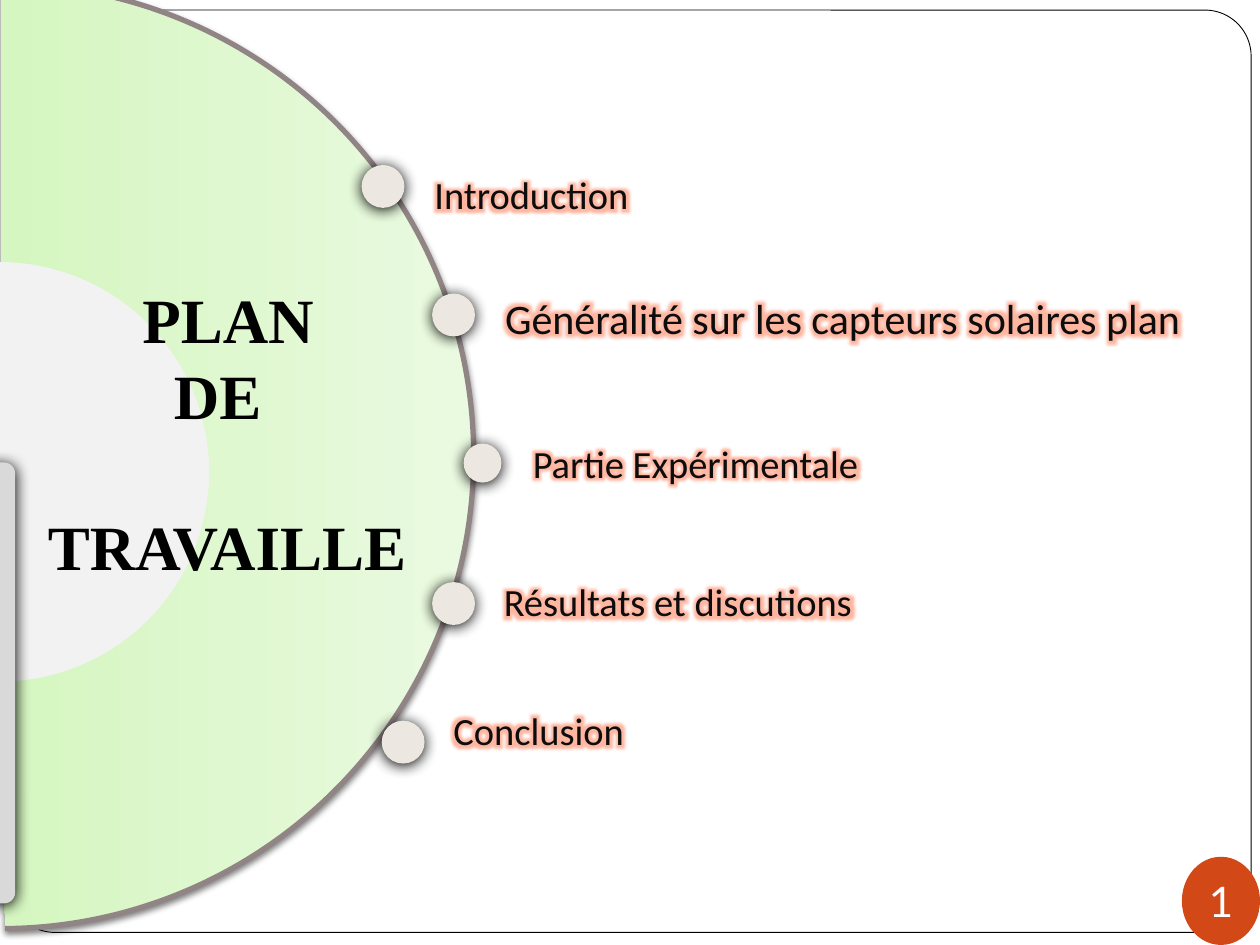
from dataclasses import dataclass

from lxml.etree import SubElement
from pptx import Presentation
from pptx.dml.color import RGBColor
from pptx.enum.shapes import MSO_SHAPE as Shape
from pptx.enum.text import MSO_ANCHOR as Anchor, MSO_AUTO_SIZE as Fit, PP_ALIGN as Align
from pptx.oxml import parse_xml
from pptx.oxml.ns import nsdecls, qn
from pptx.util import Inches, Pt


@dataclass(frozen=True)
class Theme:
    """Colours, fonts and type sizes of the slide."""
    paper: str = "FFFFFF"
    black: str = "000000"
    ink: str = "0D0D0D"
    outline: str = "69240C"
    glow: str = "FF4A14"
    badge: str = "D34817"
    rim: str = "918485"
    hub: str = "F2F2F2"
    bar: str = "D9D9D9"
    dot: str = "ECE8E1"
    dial: tuple = ((28, "92D050"), (50, "D5F6C0"), (100, "EAFAE0"))
    body_font: str = "Calibri"
    title_font: str = "Times New Roman"
    number_font: str = "Lato"
    title_size: int = 36
    number_size: int = 24
    item_size: int = 22
    item_large: int = 24


@dataclass(frozen=True)
class Box:
    """A region measured in cells of a 100 by 75 grid."""
    x: float
    y: float
    w: float
    h: float

    def sub(self, x, y, w, h):
        """Return a box placed relative to this one."""
        return Box(self.x + x, self.y + y, w, h)

    def emu(self):
        """Return left, top, width and height as lengths."""
        return [Inches(v / 10) for v in (self.x, self.y, self.w, self.h)]


T = Theme()
ITEMS = (
    ("Introduction", T.item_size, (0.7, 0.1, 3.4, 3.4), (5.5, 0.1, 42, 4.7)),
    ("Généralité sur les capteurs solaires plan", T.item_large,
     (6.3, 10.3, 3.4, 3.4), (11.1, 9.7, 57.8, 5)),
    ("Partie Expérimentale", T.item_size, (8.8, 22.2, 3, 3.1), (13.3, 21.4, 52.8, 4.7)),
    ("Résultats et discutions", T.item_size, (6.3, 33.2, 3.4, 3.4), (11, 32.4, 52.8, 4.7)),
    ("Conclusion", T.item_size, (2.3, 44.2, 3.4, 3.4), (7, 42.6, 52.8, 4.7)),
)


def rgb(value):
    """Turn a hex string into a colour."""
    return RGBColor.from_string(value)


def add_shape(s, kind, box, fill=None, line=None, width=1, adj=()):
    """Add a preset shape with a plain fill and line."""
    sp = s.shapes.add_shape(kind, *box.emu())
    sp.shadow.inherit = False
    for i, value in enumerate(adj):
        sp.adjustments[i] = value
    if fill:
        sp.fill.solid()
        sp.fill.fore_color.rgb = rgb(fill)
    if line:
        sp.line.color.rgb = rgb(line)
        sp.line.width = Pt(width)
    else:
        sp.line.fill.background()
    return sp


def add_shadow(sp, blur=8.5, dist=1, alpha=100):
    """Give a shape a shadow that falls downwards."""
    effects = sp._element.spPr.find(qn("a:effectLst"))
    shadow = SubElement(effects, qn("a:outerShdw"), blurRad=str(Pt(blur)),
                        dist=str(Pt(dist)), dir="5400000", algn="t", rotWithShape="0")
    color = SubElement(shadow, qn("a:srgbClr"), val=T.black)
    SubElement(color, qn("a:alpha"), val=str(alpha * 1000))


def add_gradient(sp, stops):
    """Fill a shape with a gradient running left to right."""
    marks = "".join(f'<a:gs pos="{pos * 1000}"><a:srgbClr val="{color}"/></a:gs>'
                    for pos, color in stops)
    fill = parse_xml(f'<a:gradFill {nsdecls("a")} rotWithShape="1"><a:gsLst>{marks}</a:gsLst>'
                     '<a:lin ang="0" scaled="0"/></a:gradFill>')
    sp._element.spPr.find(qn("a:prstGeom")).addnext(fill)


def add_glow(r):
    """Give a run a thin outline and a warm glow."""
    rpr = r._r.get_or_add_rPr()
    rpr.insert(0, parse_xml(
        f'<a:ln {nsdecls("a")} w="{Pt(0.75)}"><a:solidFill><a:srgbClr val="{T.outline}"/>'
        '</a:solidFill></a:ln>'))
    rpr.find(qn("a:solidFill")).addnext(parse_xml(
        f'<a:effectLst {nsdecls("a")}><a:glow rad="{Pt(11)}"><a:srgbClr val="{T.glow}">'
        '<a:alpha val="40000"/></a:srgbClr></a:glow></a:effectLst>'))


def write(p, text, font=T.body_font, size=T.item_size, color=T.ink, bold=False,
          align=Align.LEFT, indent=0, before=0, glow=False):
    """Write one formatted run into a paragraph."""
    p.alignment = align
    ppr = p._p.get_or_add_pPr()
    ppr.set("marL", str(Inches(indent / 10)))
    ppr.set("indent", "0")
    p.space_before = Pt(before)
    r = p.add_run()
    r.text = text
    r.font.name, r.font.size, r.font.bold = font, Pt(size), bold
    r.font.color.rgb = rgb(color)
    if glow:
        add_glow(r)


def frame(s, box):
    """Draw the rounded page border and the number badge."""
    add_shape(s, Shape.ROUNDED_RECTANGLE, box.sub(0.7, 0.8, 98.6, 73.2),
              T.paper, T.black, 0.5, (0.05,))
    badge = add_shape(s, Shape.OVAL, box.sub(93.8, 68, 6.2, 7), T.badge)
    tf = badge.text_frame
    tf.word_wrap = False
    tf.vertical_anchor = Anchor.MIDDLE
    tf.margin_left = tf.margin_right = tf.margin_top = tf.margin_bottom = 0
    write(tf.paragraphs[0], "1", T.number_font, T.number_size, T.paper, align=Align.CENTER)


def dial(s, box):
    """Draw the half disc, its hub and the bar on the left edge."""
    disc = add_shape(s, Shape.ARC, box, None, T.rim, 3, (162, 53.71))
    add_gradient(disc, T.dial)
    add_shadow(disc, 3, 2, 50)
    add_shape(s, Shape.ARC, box.sub(20.7, 22.1, 33.3, 33.3), T.hub, adj=(162, 53.6))
    bar = add_shape(s, Shape.ROUNDED_RECTANGLE, box.sub(36.1, 38, 2.5, 35), T.bar, adj=(0.35,))
    bar.rotation = 180
    add_shadow(bar)


def heading(s, box):
    """Place the title over the half disc."""
    title = s.shapes.title
    title.left, title.top, title.width, title.height = box.emu()
    s.shapes._spTree.append(title._element)
    tf = title.text_frame
    tf.word_wrap, tf.auto_size, tf.vertical_anchor = True, Fit.NONE, Anchor.TOP
    lines = (("PLAN", 7.5, 0), ("DE", 10, 0), ("TRAVAILLE", 0, 43))
    for i, (text, indent, before) in enumerate(lines):
        p = tf.add_paragraph() if i else tf.paragraphs[0]
        write(p, text, T.title_font, T.title_size, T.black, True, indent=indent, before=before)


def agenda(s, box):
    """Place a dot and a glowing label for each part of the plan."""
    for text, size, dot, label in ITEMS:
        add_shadow(add_shape(s, Shape.OVAL, box.sub(*dot), T.dot))
        tf = s.shapes.add_textbox(*box.sub(*label).emu()).text_frame
        tf.word_wrap, tf.auto_size = True, Fit.SHAPE_TO_FIT_TEXT
        write(tf.paragraphs[0], text, size=size, glow=True)


def main():
    """Build the slide and save it."""
    prs = Presentation()
    prs.slide_width, prs.slide_height = Inches(10), Inches(7.5)
    s = prs.slides.add_slide(prs.slide_layouts[5])
    frame(s, Box(0, 0, 100, 75))
    dial(s, Box(-37.4, -1.3, 75, 75))
    heading(s, Box(2.8, 21.8, 31.5, 19.2))
    agenda(s, Box(28, 13, 70, 48))
    prs.save("out.pptx")


if __name__ == "__main__":
    main()
